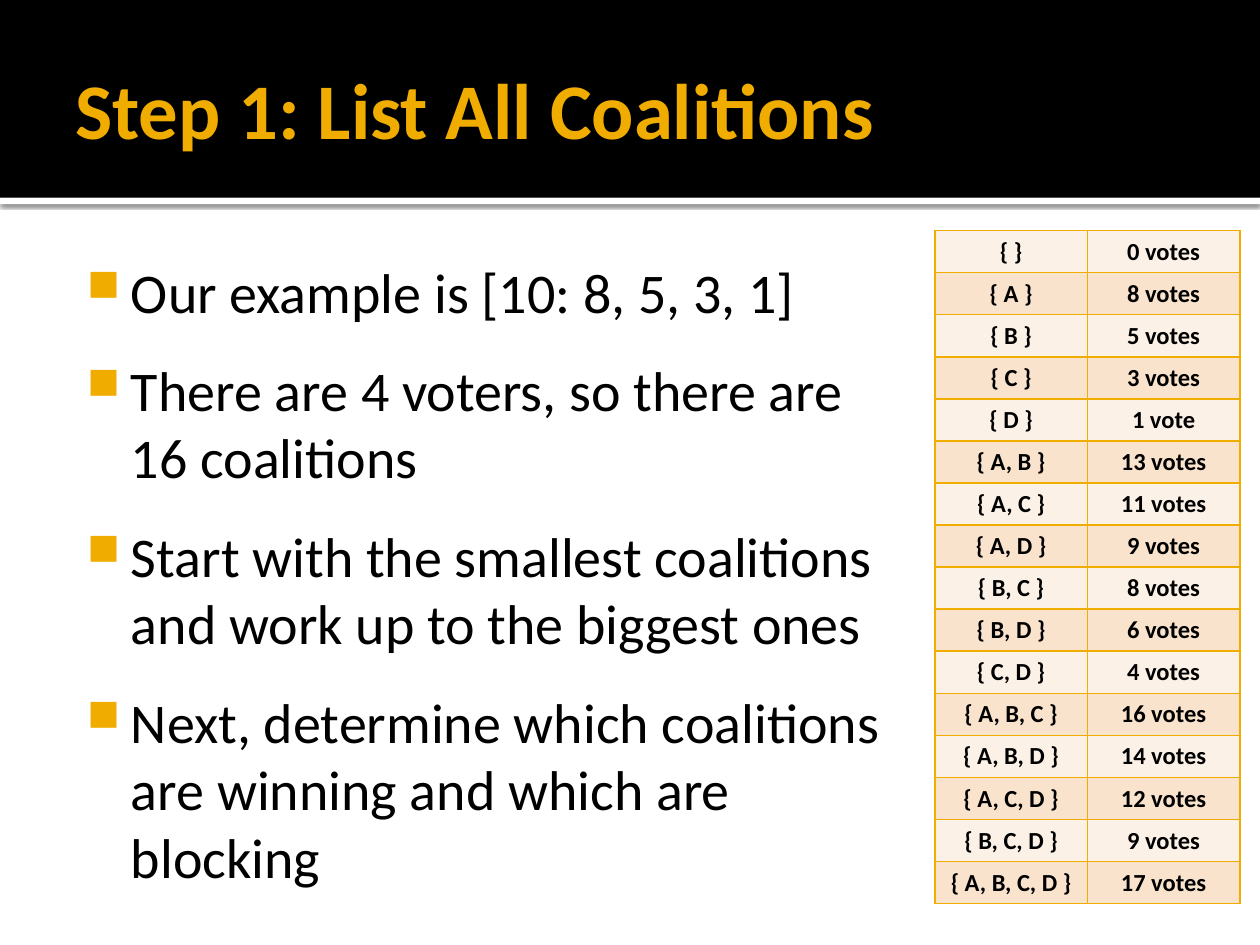
from itertools import combinations

from lxml import etree
from pptx import Presentation
from pptx.dml.color import RGBColor
from pptx.enum.shapes import MSO_SHAPE
from pptx.enum.text import MSO_ANCHOR, PP_ALIGN
from pptx.oxml.ns import qn
from pptx.util import Inches, Pt

RECTANGLE = MSO_SHAPE.RECTANGLE
MIDDLE = MSO_ANCHOR.MIDDLE
CENTER = PP_ALIGN.CENTER

BLACK = RGBColor(0x00, 0x00, 0x00)
WHITE = RGBColor(0xFF, 0xFF, 0xFF)
GOLD = RGBColor(0xF0, 0xAD, 0x00)
CREAM = RGBColor(0xFC, 0xF1, 0xE7)
PEACH = RGBColor(0xF9, 0xE3, 0xCC)

FONT = "Calibri"
VOTER_WEIGHTS = {"A": 8, "B": 5, "C": 3, "D": 1}
POINTS = [
    "Our example is [10: 8, 5, 3, 1]",
    "There are 4 voters, so there are 16 coalitions",
    "Start with the smallest coalitions and work up to the biggest ones",
    "Next, determine which coalitions are winning and which are blocking",
]


def add_element(parent, tag, **attributes):
    """Append a DrawingML element and return it."""
    return etree.SubElement(parent, qn(tag), attributes)


def format_runs(paragraph, size, color, bold=False):
    """Set the font of every run in a paragraph."""
    for run in paragraph.runs:
        run.font.name = FONT
        run.font.size = Pt(size)
        run.font.bold = bold
        run.font.color.rgb = color


def add_band(slide, top, height, color):
    """Add a plain band across the whole slide."""
    band = slide.shapes.add_shape(
        RECTANGLE, 0, Inches(top), Inches(10), Inches(height)
    )
    band.shadow.inherit = False
    band.fill.solid()
    band.fill.fore_color.rgb = color
    band.line.fill.background()
    return band


def add_drop_shadow(shape):
    """Give a shape a soft black shadow that falls straight down."""
    effects = shape._element.spPr.find(qn("a:effectLst"))
    shadow = add_element(
        effects, "a:outerShdw", blurRad=str(Pt(2.5)), dist=str(Pt(0.8)),
        dir="5400000", algn="tl", rotWithShape="0",
    )
    color = add_element(shadow, "a:srgbClr", val=str(BLACK))
    add_element(color, "a:alpha", val="60000")


def add_text_box(slide, position, margins):
    """Add a wrapping text box and return its text frame."""
    box = slide.shapes.add_textbox(*map(Inches, position))
    text_frame = box.text_frame
    text_frame.word_wrap = True
    (text_frame.margin_left, text_frame.margin_top,
     text_frame.margin_right, text_frame.margin_bottom) = map(Inches, margins)
    return text_frame


def add_title(slide, text):
    """Add the slide title over the dark band."""
    text_frame = add_text_box(
        slide, (0.5, 0.17, 9, 1.37), (0.1, 0.05, 0.05, 0.05)
    )
    text_frame.vertical_anchor = MIDDLE
    text_frame.text = text
    format_runs(text_frame.paragraphs[0], 45, GOLD, bold=True)


def set_bullet(paragraph):
    """Give a paragraph a gold square bullet with a hanging indent."""
    properties = paragraph._p.get_or_add_pPr()
    properties.set("marL", str(Inches(0.48)))
    properties.set("indent", str(Inches(-0.35)))
    color = add_element(properties, "a:buClr")
    add_element(color, "a:srgbClr", val=str(GOLD))
    add_element(properties, "a:buSzPct", val="80000")
    add_element(properties, "a:buChar", char="■")


def add_bullet_list(slide, points):
    """Add the bulleted explanation."""
    text_frame = add_text_box(
        slide, (0.5, 1.94, 6.67, 5.06), (0.06, 0.1, 0.1, 0.05)
    )
    text_frame.text = "\n".join(points)
    for paragraph in text_frame.paragraphs:
        paragraph.space_after = Pt(18)
        set_bullet(paragraph)
        format_runs(paragraph, 32, BLACK)


def list_coalitions():
    """Return the label and vote count of each coalition, smallest first."""
    rows = []
    for size in range(len(VOTER_WEIGHTS) + 1):
        for members in combinations(VOTER_WEIGHTS, size):
            votes = sum(VOTER_WEIGHTS[member] for member in members)
            label = f"{{ {', '.join(members)} }}" if members else "{ }"
            unit = "vote" if votes == 1 else "votes"
            rows.append((label, f"{votes} {unit}"))
    return rows


def set_borders(cell):
    """Draw a thin gold line on all four sides of a cell."""
    properties = cell._tc.get_or_add_tcPr()
    for index, side in enumerate(("a:lnL", "a:lnR", "a:lnT", "a:lnB")):
        line = add_element(properties, side, w=str(Pt(1)))
        fill = add_element(line, "a:solidFill")
        add_element(fill, "a:srgbClr", val=str(GOLD))
        properties.insert(index, line)


def format_cell(cell, text, color):
    """Fill in one centred bold table cell."""
    cell.text = text
    cell.fill.solid()
    cell.fill.fore_color.rgb = color
    paragraph = cell.text_frame.paragraphs[0]
    paragraph.alignment = CENTER
    format_runs(paragraph, 14, BLACK, bold=True)
    set_borders(cell)


def add_coalition_table(slide, rows):
    """Add the table of coalitions and their votes."""
    table = slide.shapes.add_table(
        len(rows), 2, Inches(7.42), Inches(1.83), Inches(2.42), Inches(5.33)
    ).table
    table.first_row = False
    for row_index, row in enumerate(rows):
        color = PEACH if row_index % 2 else CREAM
        for column_index, text in enumerate(row):
            format_cell(table.cell(row_index, column_index), text, color)


def main():
    """Build the slide and save it."""
    presentation = Presentation()
    presentation.slide_width = Inches(10)
    presentation.slide_height = Inches(7.5)
    slide = presentation.slides.add_slide(presentation.slide_layouts[6])
    add_drop_shadow(add_band(slide, 1.57, 0.05, WHITE))
    add_band(slide, 0, 1.57, BLACK)
    add_title(slide, "Step 1: List All Coalitions")
    add_bullet_list(slide, POINTS)
    add_coalition_table(slide, list_coalitions())
    presentation.save("out.pptx")


if __name__ == "__main__":
    main()
